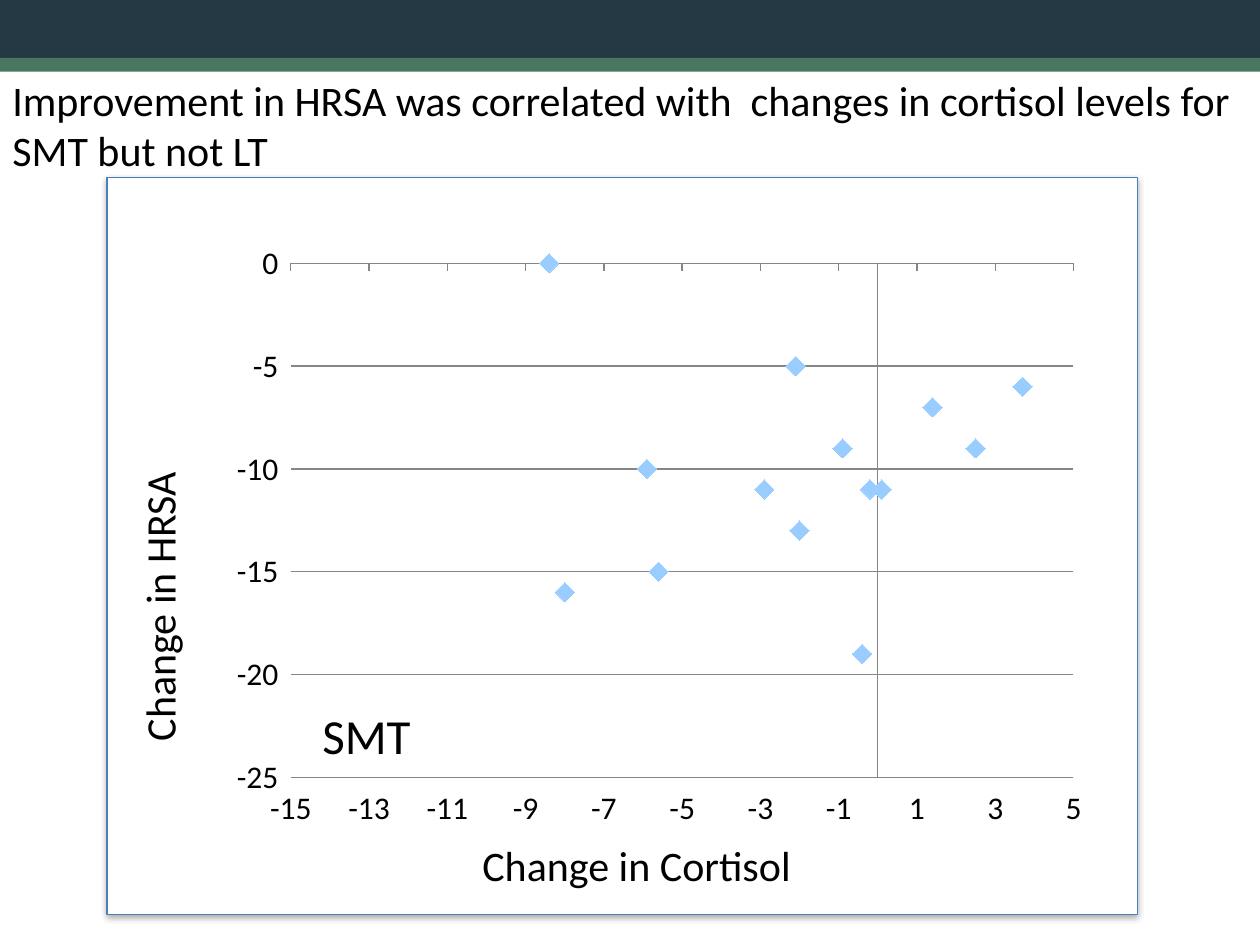
from dataclasses import dataclass
from lxml.etree import SubElement
from pptx import Presentation
from pptx.chart.data import XyChartData
from pptx.dml.color import RGBColor
from pptx.enum.chart import XL_CHART_TYPE, XL_MARKER_STYLE, XL_TICK_LABEL_POSITION, XL_TICK_MARK
from pptx.enum.shapes import MSO_SHAPE
from pptx.oxml.ns import qn
from pptx.util import Inches, Pt


@dataclass(frozen=True)
class Theme:
    font: str = "Calibri"
    ink: str = "000000"
    paper: str = "FFFFFF"
    navy: str = "233843"
    green: str = "48765F"
    border: str = "4B7EBC"
    marker: str = "99CCFF"
    grid: str = "868686"
    tick_size: int = 18
    text_size: int = 24
    group_size: int = 28


def rgb(value):
    return RGBColor.from_string(value)


def assign(target, values):
    for name, value in values.items():
        setattr(target, name, value)


class SlideBuilder:
    """Draws themed elements on a slide laid out as 100 columns by 75 rows."""

    def __init__(self, prs, theme):
        self.theme = theme
        self.column, self.row = prs.slide_width / 100, prs.slide_height / 75
        self.s = prs.slides.add_slide(prs.slide_layouts[6])

    def place(self, left, top, width, height):
        return (round(left * self.column), round(top * self.row),
                round(width * self.column), round(height * self.row))

    def style_font(self, font, size):
        assign(font, {"name": self.theme.font, "size": Pt(size)})
        font.color.rgb = rgb(self.theme.ink)

    def style_line(self, line, color):
        line.color.rgb = rgb(color)
        line.width = Pt(0.75)

    def rect(self, box, fill, border=None):
        sp = self.s.shapes.add_shape(MSO_SHAPE.RECTANGLE, *self.place(*box))
        sp.shadow.inherit = False
        sp.fill.solid()
        sp.fill.fore_color.rgb = rgb(fill)
        if border:
            self.style_line(sp.line, border)
        else:
            sp.line.fill.background()
        return sp

    def panel(self, box):
        sp = self.rect(box, self.theme.paper, self.theme.border)
        effects = sp.element.spPr.find(qn("a:effectLst"))
        shadow = SubElement(effects, qn("a:outerShdw"), blurRad=str(Pt(3.1)),
                            dist=str(Pt(1.8)), dir="5400000", rotWithShape="0")
        color = SubElement(shadow, qn("a:srgbClr"), val=self.theme.ink)
        SubElement(color, qn("a:alpha"), val="35000")

    def text(self, box, words, size, rotation=0):
        sp = self.s.shapes.add_textbox(*self.place(*box))
        sp.rotation = rotation
        tf = sp.text_frame
        assign(tf, {"word_wrap": True, "margin_top": Inches(0.07)})
        r = tf.paragraphs[0].add_run()
        r.text = words
        self.style_font(r.font, size)

    def axis(self, axis, values):
        assign(axis, {"tick_label_position": XL_TICK_LABEL_POSITION.LOW,
                      "major_tick_mark": XL_TICK_MARK.OUTSIDE,
                      "minor_tick_mark": XL_TICK_MARK.NONE, **values})
        self.style_line(axis.format.line, self.theme.grid)
        assign(axis.tick_labels, {"number_format": "General", "number_format_is_linked": False})
        self.style_font(axis.tick_labels.font, self.theme.tick_size)

    def scatter(self, box, points, x_axis, y_axis, inner):
        data = XyChartData()
        series = data.add_series("Series 1")
        for x, y in points:
            series.add_data_point(x, y)
        chart = self.s.shapes.add_chart(XL_CHART_TYPE.XY_SCATTER, *self.place(*box), data).chart
        assign(chart, {"has_legend": False, "has_title": False})
        self.style_font(chart.font, self.theme.tick_size)
        self.axis(chart.category_axis, {"has_major_gridlines": False, **x_axis})
        self.axis(chart.value_axis, {"has_major_gridlines": True, **y_axis})
        self.style_line(chart.value_axis.major_gridlines.format.line, self.theme.grid)
        plot = chart.plots[0]
        plot.vary_by_categories = False
        dots = plot.series[0]
        dots.smooth = False
        dots.format.line.fill.background()
        assign(dots.marker, {"style": XL_MARKER_STYLE.DIAMOND, "size": 11})
        dots.marker.format.fill.solid()
        dots.marker.format.fill.fore_color.rgb = rgb(self.theme.marker)
        dots.marker.format.line.fill.background()
        self.plot_layout(chart, inner)

    def plot_layout(self, chart, inner):
        area = chart.element.find(".//" + qn("c:plotArea"))
        layout = area.find(qn("c:layout"))
        if layout is None:
            layout = area.makeelement(qn("c:layout"))
            area.insert(0, layout)
        manual = SubElement(layout, qn("c:manualLayout"))
        settings = {"layoutTarget": "inner", "xMode": "edge", "yMode": "edge",
                    **dict(zip("xywh", inner))}
        for name, value in settings.items():
            SubElement(manual, qn("c:" + name), val=str(value))


def main():
    prs = Presentation()
    assign(prs, {"slide_width": Inches(10), "slide_height": Inches(7.5)})
    theme = Theme()
    s = SlideBuilder(prs, theme)
    s.rect((0, 0, 100, 5.4), theme.navy)
    s.rect((0, 4.6, 100, 1.1), theme.green)
    s.panel((8.5, 14.1, 81.8, 58.5))
    points = [(1.4, -7), (-8.4, 0), (0.1, -11), (-5.6, -15), (-0.2, -11), (-8, -16), (-5.9, -10),
              (-2.1, -5), (2.5, -9), (3.7, -6), (-2.9, -11), (-0.4, -19), (-0.9, -9), (-2, -13)]
    s.scatter((17.5, 18.5, 69.8, 48), points,
              {"minimum_scale": -15, "maximum_scale": 5, "major_unit": 2},
              {"minimum_scale": -25, "maximum_scale": 0, "major_unit": 5},
              (0.08, 0.05, 0.89, 0.85))
    s.text((37.3, 65.9, 37.3, 8.1), "Change in Cortisol", theme.text_size)
    s.text((-5.5, 37.4, 37.8, 7), "Change in HRSA", theme.text_size, rotation=270)
    s.text((24.6, 55.3, 12.7, 9.2), "SMT", theme.group_size)
    s.text((0, 5.2, 104.3, 12.1), "Improvement in HRSA was correlated with  changes in cortisol "
           "levels for SMT but not LT", theme.text_size)
    prs.save("out.pptx")


if __name__ == "__main__":
    main()
